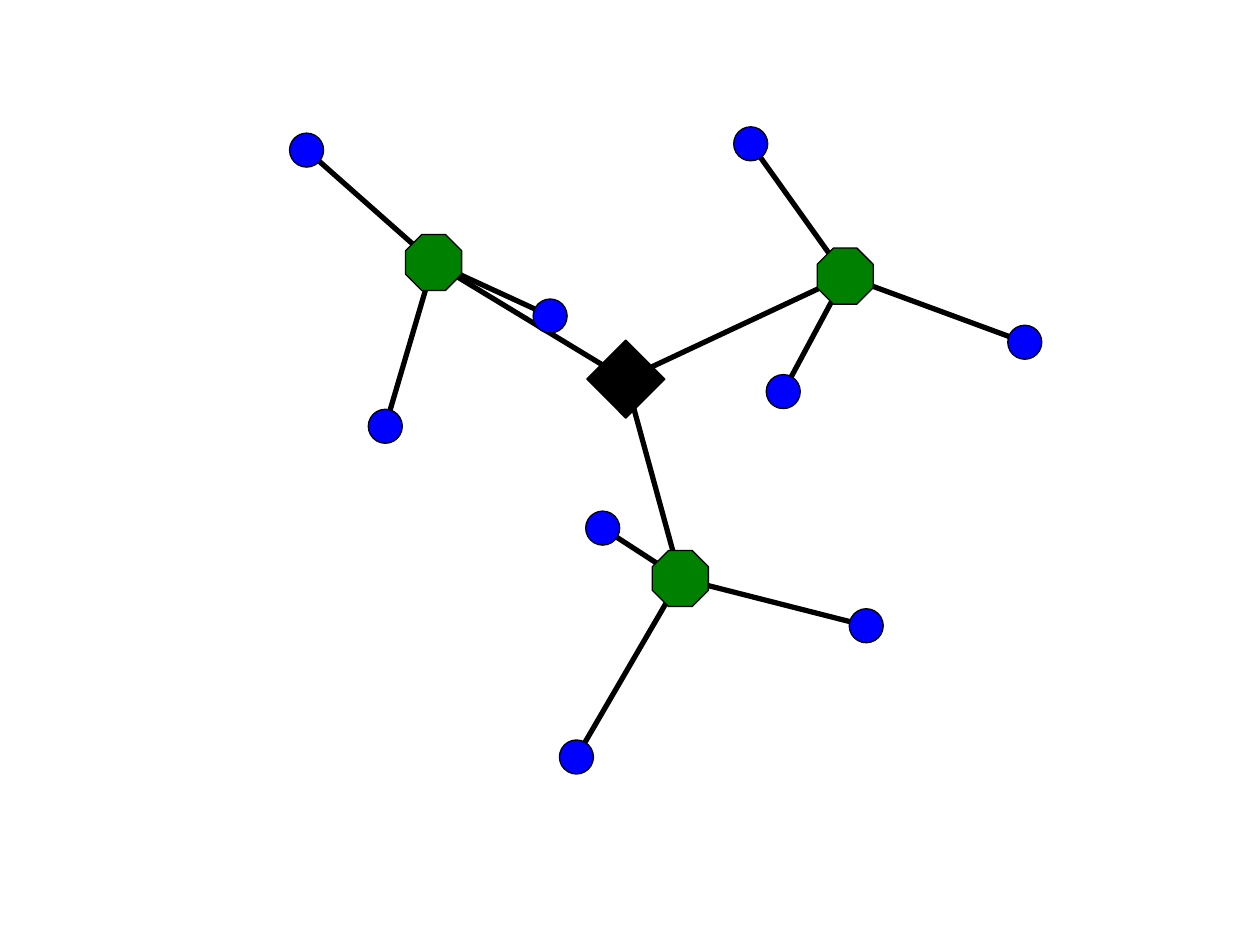
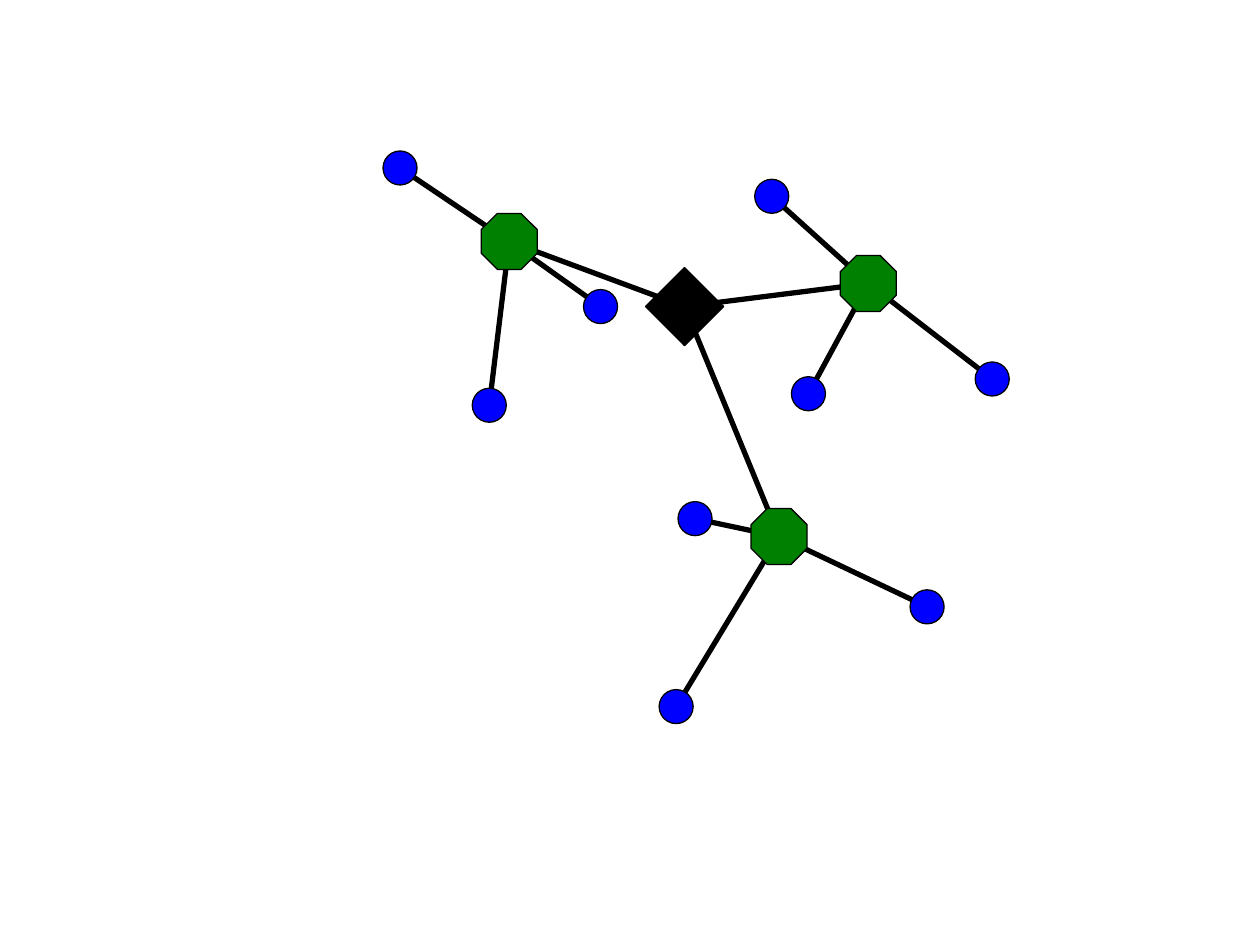
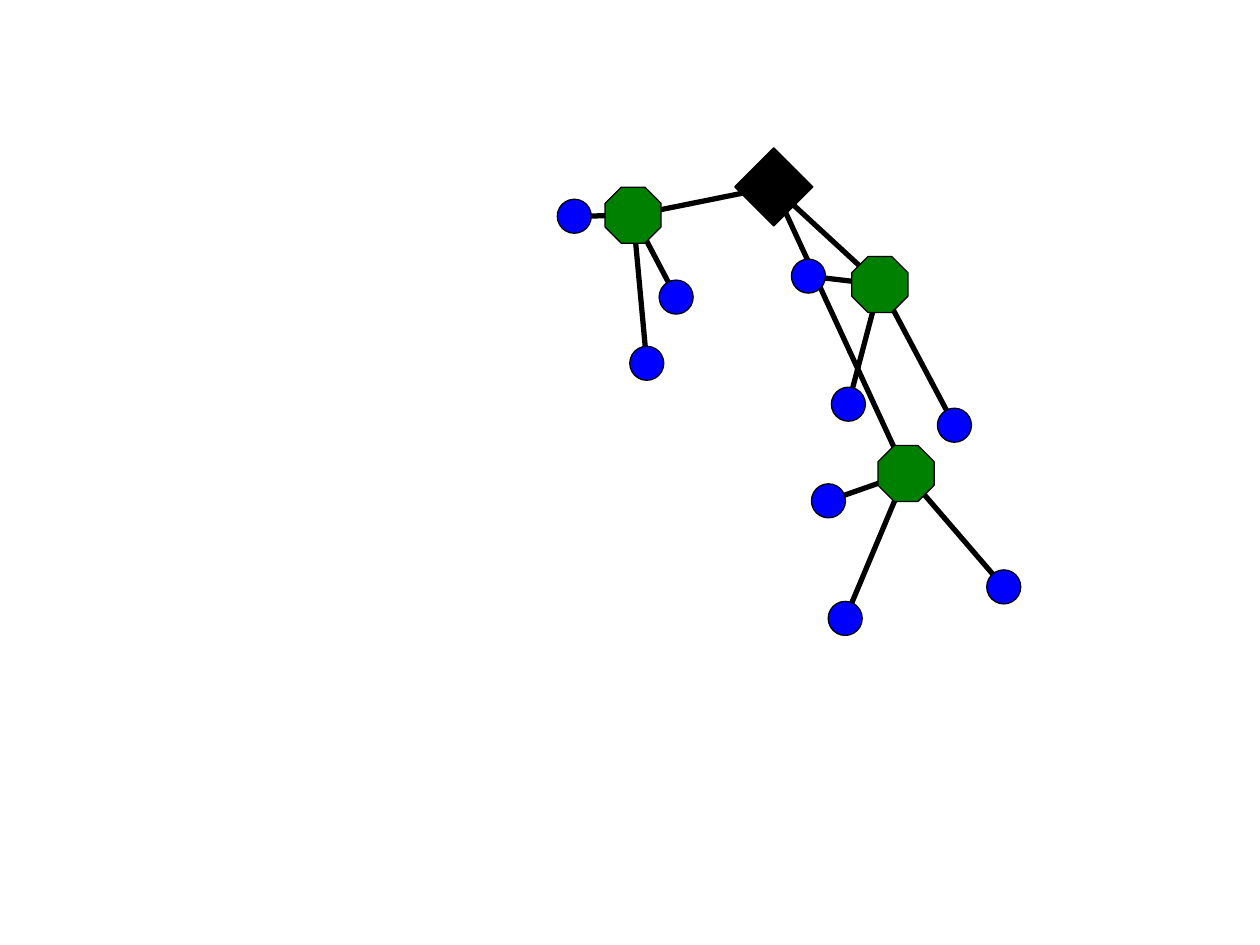
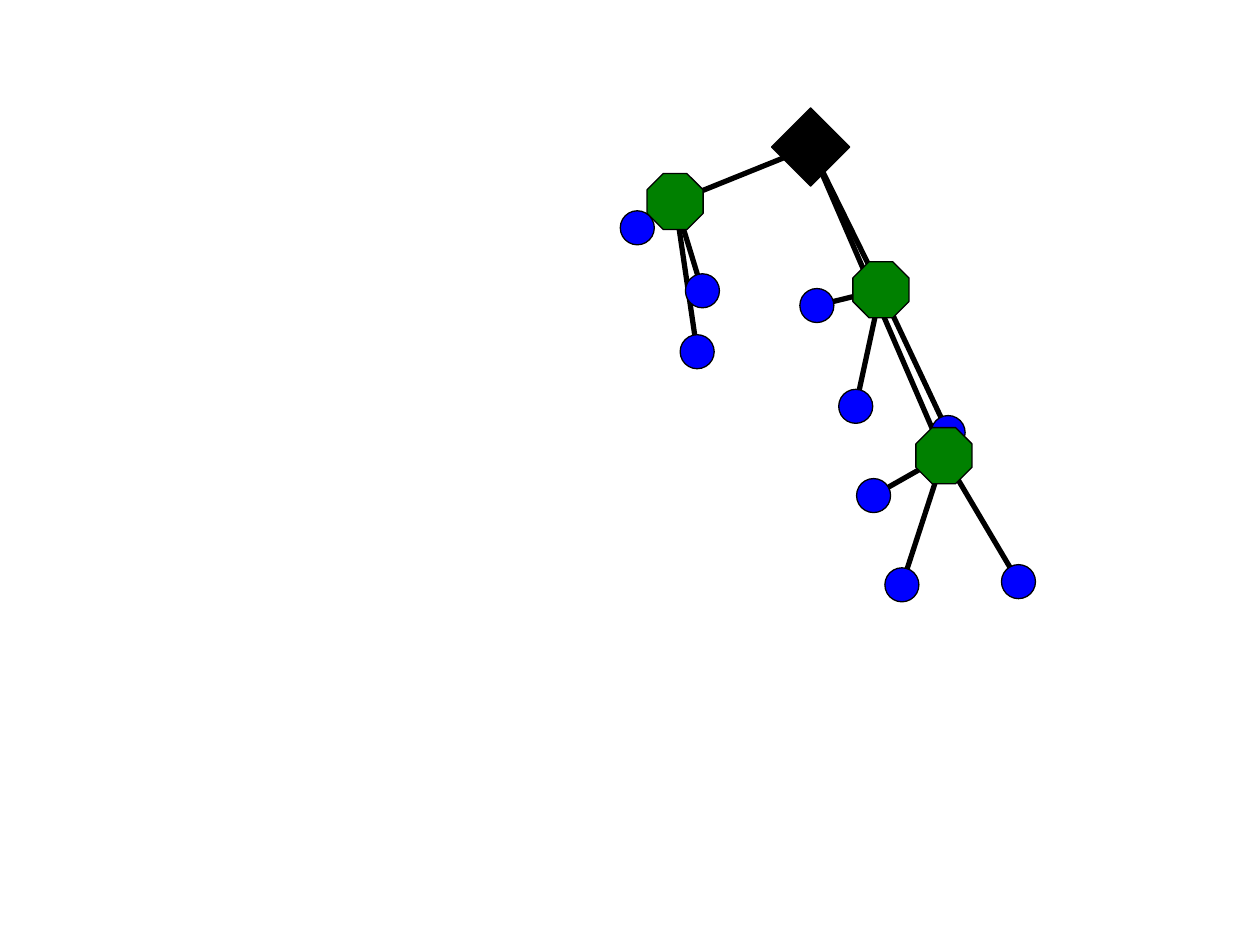
from collections import namedtuple

from lxml.etree import SubElement
from pptx import Presentation
from pptx.dml.color import RGBColor
from pptx.enum.shapes import MSO_CONNECTOR, MSO_SHAPE as Preset
from pptx.oxml.ns import qn
from pptx.util import Inches, Pt

BLACK = RGBColor(0x00, 0x00, 0x00)
GREEN = RGBColor(0x00, 0x80, 0x00)
BLUE = RGBColor(0x00, 0x00, 0xFF)

SLIDE_WIDTH, SLIDE_HEIGHT = Inches(10), Inches(7.5)
COLUMNS, ROWS = 120, 90
BLANK_LAYOUT = 6
LINK_WIDTH, OUTLINE_WIDTH = Pt(3), Pt(0.75)

NodeStyle = namedtuple("NodeStyle", "preset size fill adjustments")
ROOT = NodeStyle(Preset.DIAMOND, 7.44, BLACK, [])
HUB = NodeStyle(Preset.OCTAGON, 5.34, GREEN, [0.29])
LEAF = NodeStyle(Preset.FLOWCHART_CONNECTOR, 3.24, BLUE, [])

Network = namedtuple("Network", "root clusters")
Cluster = namedtuple("Cluster", "hub leaves")

NETWORKS = [
    Network((59.6, 36.1), [
        Cluster((80.5, 26.3), [(71.5, 13.7), (74.6, 37.3), (97.6, 32.6)]),
        Cluster((64.8, 55.1), [(57.4, 50.3), (54.9, 72.1), (82.5, 59.6)]),
        Cluster((41.3, 25), [(29.2, 14.3), (52.4, 30.1), (36.7, 40.6)]),
    ]),
    Network((65.2, 29.2), [
        Cluster((82.7, 27), [(73.5, 18.7), (77, 37.5), (94.5, 36.1)]),
        Cluster((74.2, 51.1), [(66.2, 49.4), (64.4, 67.3), (88.3, 57.8)]),
        Cluster((48.5, 23), [(38.1, 16), (57.2, 29.2), (46.6, 38.6)]),
    ]),
    Network((73.7, 17.8), [
        Cluster((83.8, 27.1), [(77, 26.3), (80.8, 38.5), (90.9, 40.5)]),
        Cluster((86.3, 45.1), [(78.9, 47.7), (80.5, 58.9), (95.6, 55.9)]),
        Cluster((60.3, 20.5), [(54.7, 20.6), (64.4, 28.3), (61.6, 34.6)]),
    ]),
    Network((77.2, 14), [
        Cluster((83.9, 27.6), [(77.8, 29.1), (81.5, 38.7), (90.3, 41.2)]),
        Cluster((89.9, 43.4), [(83.2, 47.2), (85.9, 55.7), (97, 55.4)]),
        Cluster((64.3, 19.2), [(60.7, 21.7), (66.9, 27.7), (66.4, 33.5)]),
    ]),
]


def across(columns):
    return round(SLIDE_WIDTH * columns / COLUMNS)


def down(rows):
    return round(SLIDE_HEIGHT * rows / ROWS)


def format_line(line, width):
    line.color.rgb = BLACK
    line.width = width


def add_link(page, start, end):
    link = page.shapes.add_connector(
        MSO_CONNECTOR.STRAIGHT,
        across(start[0]), down(start[1]), across(end[0]), down(end[1]))
    format_line(link.line, LINK_WIDTH)
    SubElement(link._element.spPr, qn("a:effectLst"))


def add_node(page, style, centre):
    column, row = centre
    half = style.size / 2
    node = page.shapes.add_shape(
        style.preset, across(column - half), down(row - half),
        across(style.size), down(style.size))
    node.shadow.inherit = False
    node.fill.solid()
    node.fill.fore_color.rgb = style.fill
    format_line(node.line, OUTLINE_WIDTH)
    for index, value in enumerate(style.adjustments):
        node.adjustments[index] = value


def draw_network(page, network):
    for cluster in network.clusters:
        for target in [*cluster.leaves, network.root]:
            add_link(page, cluster.hub, target)
    add_node(page, ROOT, network.root)
    for cluster in network.clusters:
        add_node(page, HUB, cluster.hub)
        for leaf in cluster.leaves:
            add_node(page, LEAF, leaf)


def main():
    deck = Presentation()
    deck.slide_width, deck.slide_height = SLIDE_WIDTH, SLIDE_HEIGHT
    for network in NETWORKS:
        page = deck.slides.add_slide(deck.slide_layouts[BLANK_LAYOUT])
        draw_network(page, network)
    deck.save("out.pptx")


if __name__ == "__main__":
    main()
